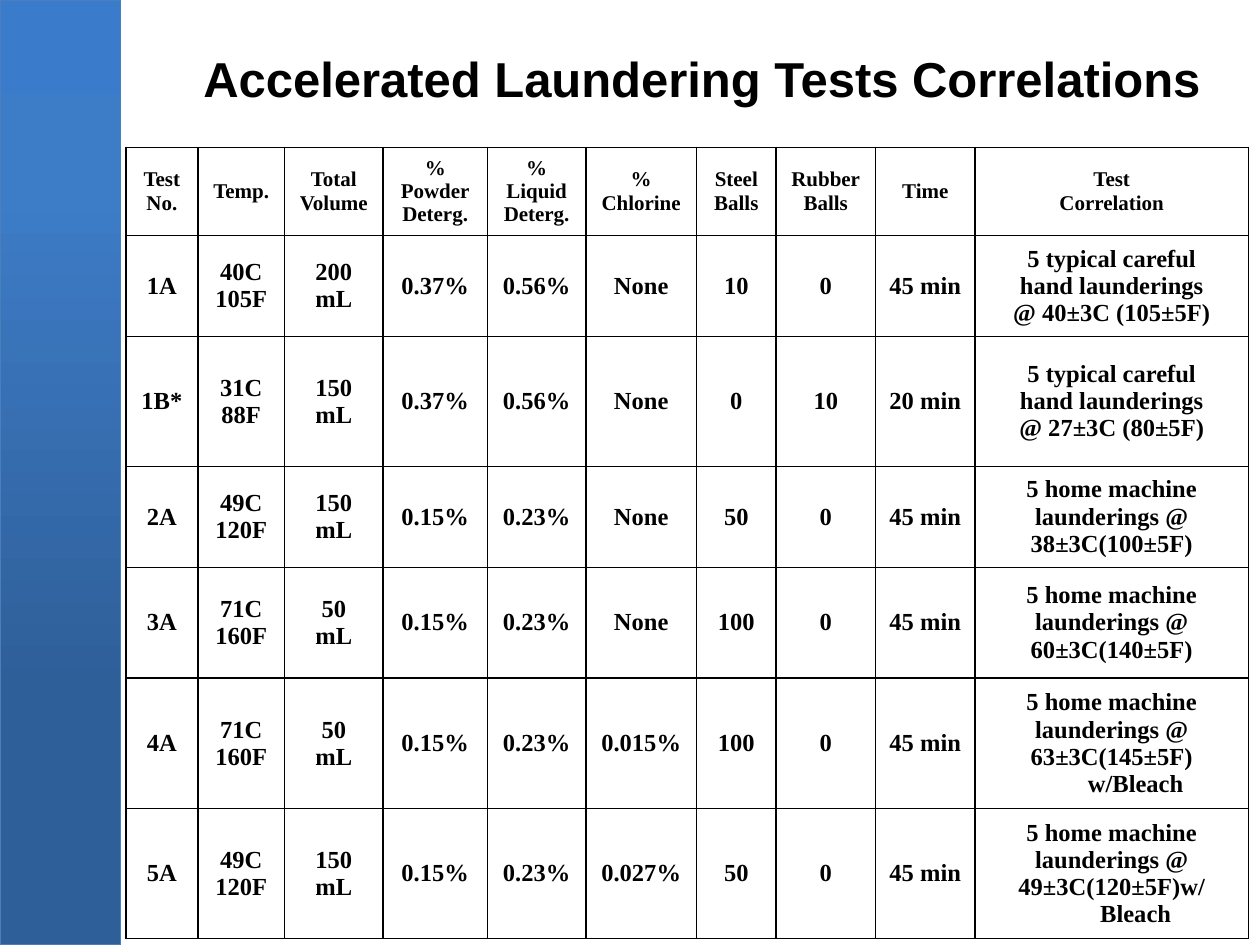
from copy import deepcopy

from lxml.etree import SubElement
from pptx import Presentation
from pptx.dml.color import RGBColor as Rgb
from pptx.enum.shapes import MSO_SHAPE as Shape
from pptx.enum.text import MSO_ANCHOR as Anchor, PP_ALIGN as Align
from pptx.oxml.ns import qn
from pptx.util import Inches, Pt

COLORS = {
    "ink": "000000",
    "band_dark": "2F5F99",
    "band_mid": "3D7CC7",
    "band_light": "3A7CCB",
    "band_edge": "4B7EBC",
}

# The slide is a grid of 40 columns by 30 rows, each a quarter inch
UNIT = Inches(0.25)
GRID_COLUMNS, GRID_ROWS = 40, 30

# Band gradient, from the bottom of the slide to its top
BAND_STOPS = [(0, "band_dark"), (0.27, "band_dark"), (0.8, "band_mid"), (1, "band_light")]

TITLE_FONT = {"name": "Arial", "size": Pt(28), "bold": True}
HEADER_FONT = {"name": "Times New Roman", "size": Pt(12), "bold": True}
BODY_FONT = {**HEADER_FONT, "size": Pt(14)}
CELL_FORMAT = {
    "vertical_anchor": Anchor.MIDDLE,
    "margin_left": Inches(0.1), "margin_right": Inches(0.1),
    "margin_top": Inches(0.05), "margin_bottom": Inches(0.05),
}
HANGING = Inches(0.38)

# Table tracks in grid units
COLUMN_WIDTHS = [2.28, 2.76, 3.12, 3.32, 3.12, 3.52, 2.52, 3.16, 3.16, 8.68]
ROW_HEIGHTS = [2.8, 3.2, 4.12, 3.2, 3.52, 4.12, 4.12]

HEADERS = ["Test\nNo.", "Temp.", "Total\nVolume", "%\nPowder\nDeterg.", "%\nLiquid\nDeterg.",
           "%\nChlorine", "Steel\nBalls", "Rubber\nBalls", "Time", "Test\nCorrelation"]
HAND = "5 typical careful\nhand launderings\n@ "
MACHINE = "5 home machine\nlaunderings @\n"
TESTS = [
    ["1A", "40C\n105F", "200\nmL", "0.37%", "0.56%", "None", "10", "0", "45 min",
     HAND + "40±3C (105±5F)"],
    ["1B*", "31C\n88F", "150\nmL", "0.37%", "0.56%", "None", "0", "10", "20 min",
     HAND + "27±3C (80±5F)"],
    ["2A", "49C\n120F", "150\nmL", "0.15%", "0.23%", "None", "50", "0", "45 min",
     MACHINE + "38±3C(100±5F)"],
    ["3A", "71C\n160F", "50\nmL", "0.15%", "0.23%", "None", "100", "0", "45 min",
     MACHINE + "60±3C(140±5F)"],
    ["4A", "71C\n160F", "50\nmL", "0.15%", "0.23%", "0.015%", "100", "0", "45 min",
     MACHINE + "63±3C(145±5F) w/Bleach"],
    ["5A", "49C\n120F", "150\nmL", "0.15%", "0.23%", "0.027%", "50", "0", "45 min",
     MACHINE + "49±3C(120±5F)w/Bleach"],
]


def units(*counts):
    return [int(count * UNIT) for count in counts]


def color(name):
    return Rgb.from_string(COLORS[name])


def set_format(target, values):
    for attribute, value in values.items():
        setattr(target, attribute, value)


def write(frame, text, font, hanging=0):
    """Centred lines, one paragraph each, with an optional hanging indent."""
    frame.text = text
    for line in frame.paragraphs:
        line.alignment = Align.CENTER
        if hanging:
            properties = line._p.get_or_add_pPr()
            properties.set("marL", str(hanging))
            properties.set("indent", str(-hanging))
        for run in line.runs:
            set_format(run.font, font)
            run.font.color.rgb = color("ink")


def add_band(slide):
    band = slide.shapes.add_shape(Shape.RECTANGLE, *units(0, 0, 3.84, GRID_ROWS))
    band.shadow.inherit = False
    band.line.color.rgb = color("band_edge")
    band.line.width = Pt(0.75)
    band.fill.gradient()
    band.fill.gradient_angle = 90
    stop_list = band._element.spPr.find(qn("a:gradFill")).find(qn("a:gsLst"))
    while len(stop_list) < len(BAND_STOPS):
        stop_list.append(deepcopy(stop_list[0]))
    for stop, (position, name) in zip(band.fill.gradient_stops, BAND_STOPS):
        stop.position = position
        stop.color.rgb = color(name)


def add_title(slide, text):
    title = slide.shapes.add_textbox(*units(4, 1, 36.56, 2.92)).text_frame
    set_format(title, {"word_wrap": True, "vertical_anchor": Anchor.MIDDLE})
    write(title, text, TITLE_FONT)


def add_borders(cell):
    properties = cell._tc.get_or_add_tcPr()
    for index, side in enumerate(("lnL", "lnR", "lnT", "lnB")):
        border = SubElement(properties, qn(f"a:{side}"), w=str(Pt(1)))
        fill = SubElement(border, qn("a:solidFill"))
        SubElement(fill, qn("a:srgbClr"), val=COLORS["ink"])
        properties.insert(index, border)


def add_tests_table(slide, rows):
    size = units(sum(COLUMN_WIDTHS), sum(ROW_HEIGHTS))
    table = slide.shapes.add_table(
        len(rows), len(COLUMN_WIDTHS), *units(4, 4.68), *size).table
    set_format(table, {"first_row": False, "horz_banding": False})
    for column, width in zip(table.columns, units(*COLUMN_WIDTHS)):
        column.width = width
    for row, height in zip(table.rows, units(*ROW_HEIGHTS)):
        row.height = height
    for row_index, texts in enumerate(rows):
        font = BODY_FONT if row_index else HEADER_FONT
        for column_index, text in enumerate(texts):
            cell = table.cell(row_index, column_index)
            set_format(cell, CELL_FORMAT)
            cell.fill.background()
            add_borders(cell)
            write(cell.text_frame, text, font, HANGING)


def main():
    deck = Presentation()
    deck.slide_width, deck.slide_height = units(GRID_COLUMNS, GRID_ROWS)
    slide = deck.slides.add_slide(deck.slide_layouts[6])
    add_band(slide)
    add_title(slide, "Accelerated Laundering Tests Correlations")
    add_tests_table(slide, [HEADERS] + TESTS)
    deck.save("out.pptx")


if __name__ == "__main__":
    main()
